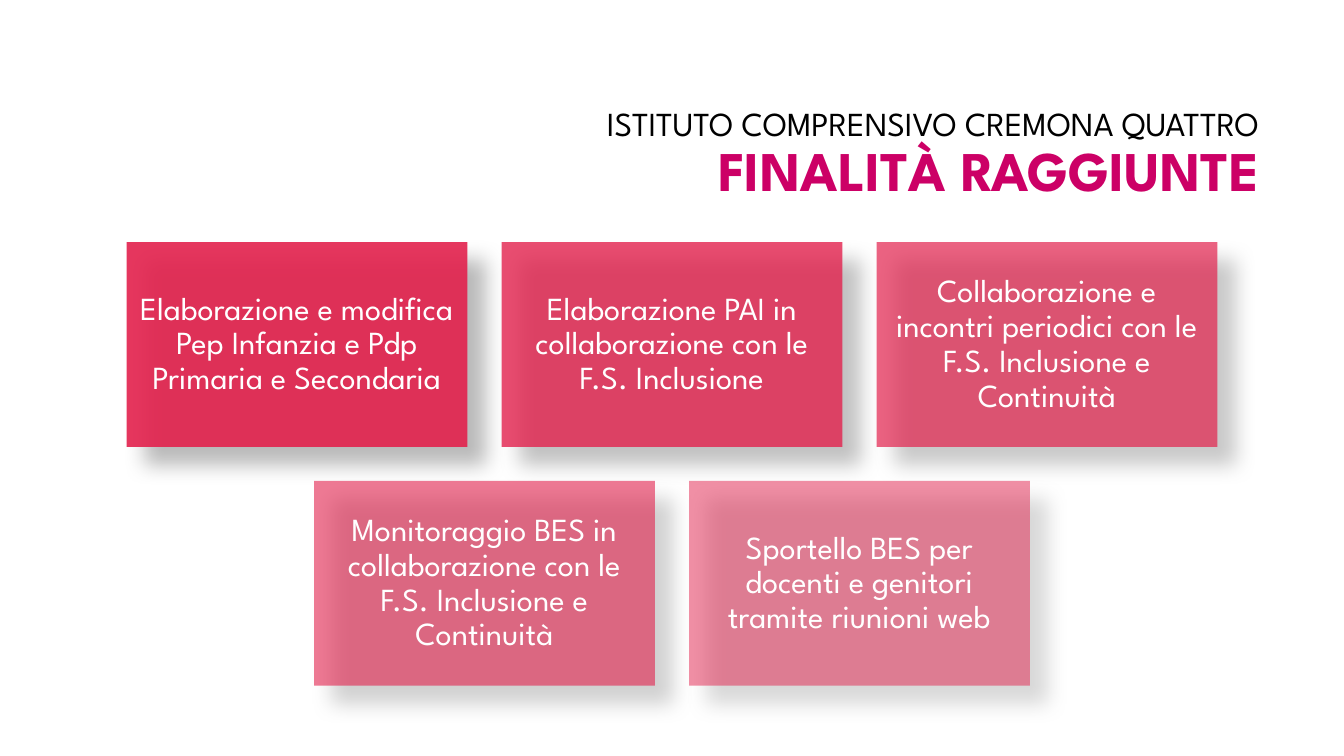
from dataclasses import dataclass

from lxml import etree
from pptx import Presentation
from pptx import util as u
from pptx.dml.color import RGBColor
from pptx.enum import shapes, text
from pptx.oxml import ns
from pptx.shapes.autoshape import Shape
from pptx.slide import Slide
from pptx.text.text import TextFrame

BLACK = RGBColor(0x00, 0x00, 0x00)
WHITE = RGBColor(0xFF, 0xFF, 0xFF)
MAGENTA = RGBColor(0xCC, 0x00, 0x66)
RED = RGBColor(0xE3, 0x21, 0x4D)
FONT = "League Spartan"

SLIDE_W, SLIDE_H = u.Cm(33.87), u.Cm(19.05)
CARD_W, CARD_H = u.Cm(8.59), u.Cm(5.16)
GAP = u.Cm(0.86)
CARDS_TOP = u.Cm(6.1)


@dataclass
class Card:
    label: str
    opacity: int  # percent


ROWS = [
    [
        Card("Elaborazione e modifica Pep Infanzia e Pdp Primaria e Secondaria", 90),
        Card("Elaborazione PAI in collaborazione con le F.S. Inclusione", 80),
        Card("Collaborazione e incontri periodici con le F.S. Inclusione e Continuità", 70),
    ],
    [
        Card("Monitoraggio BES in collaborazione con le F.S. Inclusione e Continuità", 60),
        Card("Sportello BES per docenti e genitori tramite riunioni web", 50),
    ],
]


def set_alpha(color: etree._Element, percent: int) -> None:
    etree.SubElement(color, ns.qn("a:alpha"), val=str(percent * 1000))


def add_shadow(sp: Shape) -> None:
    """Give the shape a soft shadow to the lower right."""
    sp.shadow.inherit = False
    effects = sp.element.spPr.find(ns.qn("a:effectLst"))
    shadow = etree.SubElement(
        effects, ns.qn("a:outerShdw"), blurRad=str(u.Pt(15)), dist=str(u.Pt(18)),
        dir=str(45 * 60000), algn="tl", rotWithShape="0")
    set_alpha(etree.SubElement(shadow, ns.qn("a:srgbClr"), val=str(BLACK)), 30)


def add_text_frame(s: Slide, left: int, top: int, width: int, height: int,
                   align: text.PP_ALIGN) -> TextFrame:
    tf = s.shapes.add_textbox(left, top, width, height).text_frame
    tf.word_wrap = True
    tf.vertical_anchor = text.MSO_ANCHOR.MIDDLE
    p = tf.paragraphs[0]
    p.alignment = align
    p.line_spacing = 0.9
    p.font.name = FONT
    return tf


def add_title(s: Slide) -> None:
    tf = add_text_frame(s, u.Cm(8.05), u.Cm(2.13), u.Cm(23.93), u.Cm(3.58),
                        text.PP_ALIGN.RIGHT)
    p = tf.paragraphs[0]
    school = p.add_run()
    school.text = "ISTITUTO COMPRENSIVO CREMONA QUATTRO"
    school.font.size = u.Pt(24)
    school.font.color.rgb = BLACK
    p.add_line_break()
    heading = p.add_run()
    heading.text = "FINALITÀ RAGGIUNTE"
    heading.font.size = u.Pt(40)
    heading.font.bold = True
    heading.font.color.rgb = MAGENTA
    for r in p.runs:
        r.font.name = FONT


def add_card(s: Slide, card: Card, left: int, top: int) -> None:
    sp = s.shapes.add_shape(shapes.MSO_SHAPE.RECTANGLE, left, top, CARD_W, CARD_H)
    sp.fill.solid()
    sp.fill.fore_color.rgb = RED
    set_alpha(sp.element.spPr.find(".//" + ns.qn("a:srgbClr")), card.opacity)
    sp.line.fill.background()
    add_shadow(sp)

    # A separate box keeps the letters out of the shadow.
    tf = add_text_frame(s, left, top, CARD_W, CARD_H, text.PP_ALIGN.CENTER)
    tf.margin_left = tf.margin_right = tf.margin_top = tf.margin_bottom = u.Cm(0.24)
    p = tf.paragraphs[0]
    r = p.add_run()
    r.text = card.label
    r.font.name = FONT
    r.font.size = u.Pt(23)
    r.font.color.rgb = WHITE


def add_cards(s: Slide) -> None:
    """Draw the rows of cards, each centred on the slide."""
    for i, row in enumerate(ROWS):
        row_w = len(row) * (CARD_W + GAP) - GAP
        left = (SLIDE_W - row_w) // 2
        for j, card in enumerate(row):
            add_card(s, card, left + j * (CARD_W + GAP), CARDS_TOP + i * (CARD_H + GAP))


def main() -> None:
    prs = Presentation()
    prs.slide_width, prs.slide_height = SLIDE_W, SLIDE_H
    s = prs.slides.add_slide(prs.slide_layouts[6])
    add_title(s)
    add_cards(s)
    prs.save("out.pptx")


if __name__ == "__main__":
    main()
